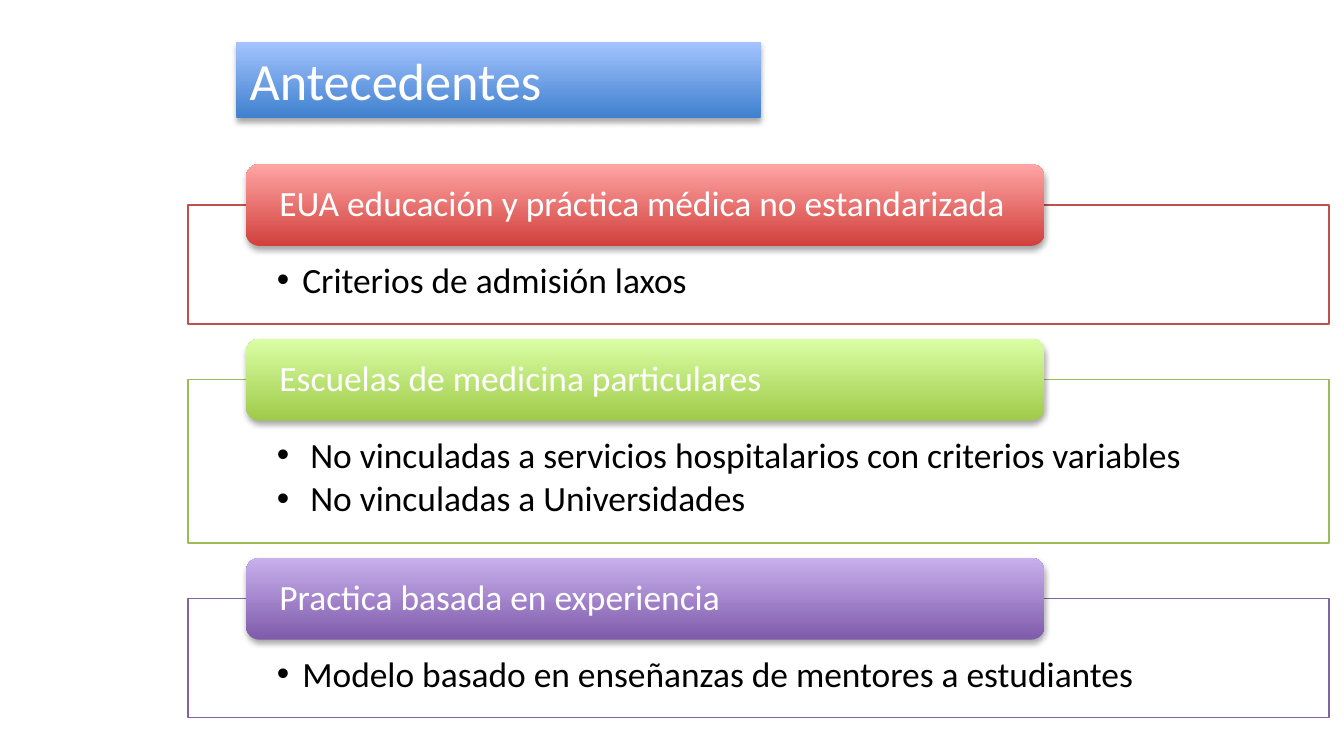
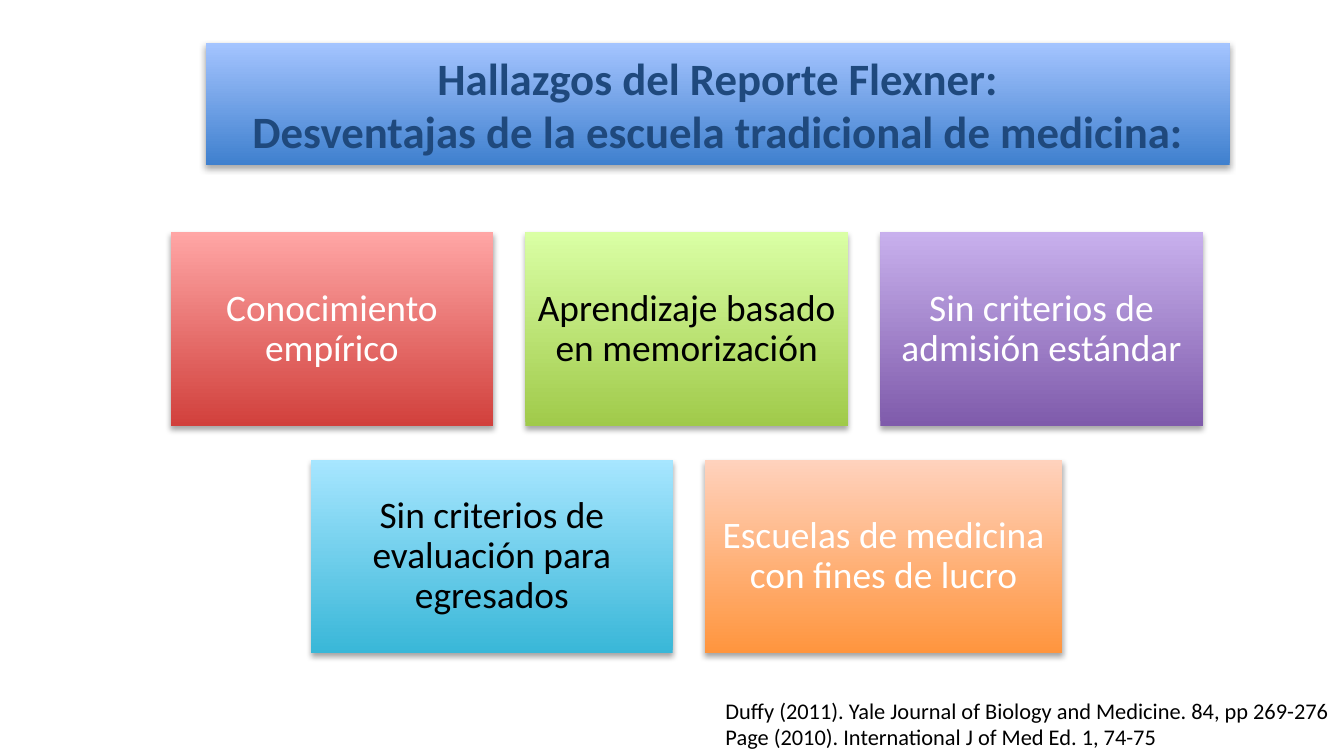
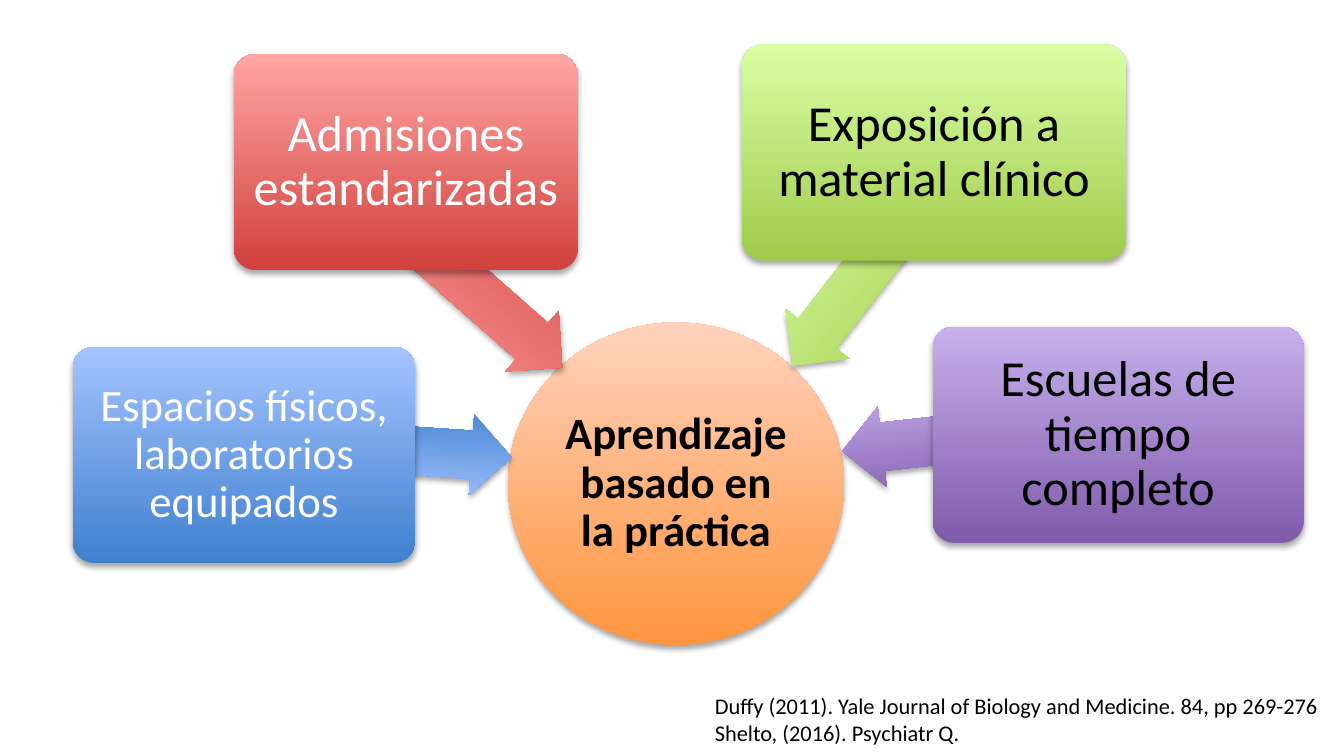
from dataclasses import dataclass
from lxml.etree import SubElement
from pptx import Presentation
from pptx.dml.color import RGBColor
from pptx.enum.shapes import MSO_SHAPE
from pptx.enum.text import MSO_ANCHOR, PP_ALIGN
from pptx.oxml.ns import qn
from pptx.util import Inches, Pt


@dataclass(frozen=True)
class Theme:
    """Colours as (dark, light) pairs, and type sizes in points."""
    font: str = "Calibri"
    blue: tuple = ("3F80CE", "A4C4FF")
    red: tuple = ("D1403C", "FFA6A5")
    green: tuple = ("A0CA4A", "DAFFA5")
    violet: tuple = ("7F5BAB", "C8B0ED")
    aqua: tuple = ("39B7D8", "A7E6FF")
    orange: tuple = ("FF953E", "FFD2BD")
    edges: tuple = ("C0504D", "9BBB59", "8064A2")
    white: str = "FFFFFF"
    black: str = "000000"
    navy: str = "1F497D"
    title: int = 28
    large: int = 27
    head: int = 24
    tile: int = 20
    body: int = 19
    note: int = 12


T = Theme()
DUFFY = "Duffy (2011). Yale Journal of Biology and Medicine. 84, pp 269-276"


def rgb(code):
    """Turn a hex code into a colour."""
    return RGBColor.from_string(code)


def add_form(slide, kind, box):
    """Add a preset shape without shadow or line."""
    form = slide.shapes.add_shape(kind, *map(Inches, box))
    form.shadow.inherit = False
    form.line.fill.background()
    return form


def add_block(slide, kind, box, pair):
    """Add a shape with a vertical gradient and a soft shadow."""
    block = add_form(slide, kind, box)
    block.fill.gradient()
    block.fill.gradient_angle = 90
    for stop, code in zip(block.fill.gradient_stops, pair):
        stop.color.rgb = rgb(code)
    effects = block._element.spPr.find(qn("a:effectLst"))
    shade = SubElement(effects, qn("a:outerShdw"), blurRad="40000",
                       dist="23000", dir="5400000", rotWithShape="0")
    tint = SubElement(shade, qn("a:srgbClr"), val=T.black)
    SubElement(tint, qn("a:alpha"), val="35000")
    return block


def add_bullet(para):
    """Give a paragraph a hanging round bullet."""
    props = para._p.get_or_add_pPr()
    props.set("marL", str(Inches(0.19)))
    props.set("indent", str(-Inches(0.19)))
    SubElement(props, qn("a:buFont"), typeface="Arial")
    SubElement(props, qn("a:buChar"), char="•")


def write(shape, lines, size, color, align=PP_ALIGN.CENTER, bold=False,
          inset=(0.1, 0.05, 0.1, 0.05), anchor=MSO_ANCHOR.MIDDLE,
          pitch=1.0, bullet=False):
    """Write one paragraph per line into a shape."""
    frame = shape.text_frame
    frame.word_wrap = True
    frame.vertical_anchor = anchor
    (frame.margin_left, frame.margin_top,
     frame.margin_right, frame.margin_bottom) = map(Inches, inset)
    for i, line in enumerate(lines):
        para = frame.add_paragraph() if i else frame.paragraphs[0]
        if bullet:
            add_bullet(para)
            para.level = 1
            para.space_after = Pt(3)
        para.alignment = align
        para.line_spacing = pitch
        run = para.add_run()
        run.text = line
        run.font.name = T.font
        run.font.size = Pt(size)
        run.font.bold = bold
        run.font.color.rgb = rgb(color)


def add_title(slide, box, lines, size, color, **style):
    """Add the blue title band."""
    band = add_block(slide, MSO_SHAPE.RECTANGLE, box, T.blue)
    write(band, lines, size, color, **style)


def add_notes(slide, box, lines):
    """Add source lines at the foot."""
    note = slide.shapes.add_textbox(*map(Inches, box))
    write(note, lines, T.note, T.black, PP_ALIGN.LEFT, anchor=MSO_ANCHOR.TOP)


def add_panel(slide, box, head, points, pair, edge):
    """Add an outlined list with a heading pill over its top edge."""
    left, top, width, height = box
    pill = 0.61
    frame = add_form(slide, MSO_SHAPE.RECTANGLE,
                     (left, top + pill / 2, width, height - pill / 2))
    frame.fill.solid()
    frame.fill.fore_color.rgb = rgb(T.white)
    frame.line.color.rgb = rgb(edge)
    frame.line.width = Pt(0.75)
    write(frame, points, T.body, T.black, PP_ALIGN.LEFT, pitch=0.9,
          inset=(0.66, 0.43, 0.66, 0.15), anchor=MSO_ANCHOR.TOP, bullet=True)
    label = add_block(slide, MSO_SHAPE.ROUNDED_RECTANGLE,
                      (left + 0.43, top, width * 0.7, pill), pair)
    write(label, [head], T.body, T.white, PP_ALIGN.LEFT, pitch=0.9,
          inset=(0.22, 0, 0.22, 0))


def add_row(slide, mid, top, tiles):
    """Add a centred row of tiles with equal gaps."""
    gap = 0.24
    left = mid - (sum(tile[0] for tile in tiles) + gap * (len(tiles) - 1)) / 2
    for width, text, pair, color in tiles:
        tile = add_block(slide, MSO_SHAPE.RECTANGLE,
                         (left, top, width, 1.44), pair)
        write(tile, [text], T.tile, color, inset=(0.08,) * 4, pitch=0.9)
        left += width + gap


def add_node(slide, box, text, size, color, pair, arrow, turn):
    """Add a rounded node over the arrow that leaves it."""
    shaft = add_block(slide, MSO_SHAPE.LEFT_ARROW, (*arrow, 0.6), pair)
    shaft.adjustments[0] = 0.6
    shaft.adjustments[1] = 0.5
    shaft.rotation = turn
    node = add_block(slide, MSO_SHAPE.ROUNDED_RECTANGLE, (*box, 1.61), pair)
    node.adjustments[0] = 0.1
    write(node, [text], size, color, inset=(0.06,) * 4, pitch=0.9)


def draw_past(slide):
    """Build the background slide."""
    add_title(slide, (1.76, 0.31, 3.9, 0.57), ["Antecedentes"],
              T.title, T.white, align=PP_ALIGN.LEFT)
    panels = [
        ("EUA educación y práctica médica no estandarizada",
         ["Criterios de admisión laxos"], T.red),
        ("Escuelas de medicina particulares",
         [" No vinculadas a servicios hospitalarios con criterios variables",
          " No vinculadas a Universidades"], T.green),
        ("Practica basada en experiencia",
         ["Modelo basado en enseñanzas de mentores a estudiantes"], T.violet),
    ]
    top = 1.22
    for (head, points, pair), edge in zip(panels, T.edges):
        height = 0.86 + 0.33 * len(points)
        add_panel(slide, (1.4, top, 8.49, height), head, points, pair, edge)
        top += height + 0.11


def draw_flaws(slide):
    """Build the report findings slide."""
    add_title(slide, (1.53, 0.32, 7.62, 0.91),
              ["Hallazgos del Reporte Flexner:",
               "Desventajas de la escuela tradicional de medicina:"],
              T.head, T.navy, bold=True)
    add_row(slide, 5.11, 1.73, [
        (2.4, "Conocimiento empírico", T.red, T.white),
        (2.4, "Aprendizaje basado en memorización", T.green, T.black),
        (2.4, "Sin criterios de admisión estándar", T.violet, T.white)])
    add_row(slide, 5.11, 3.42, [
        (2.69, "Sin criterios de evaluación para egresados", T.aqua, T.black),
        (2.66, "Escuelas de medicina con fines de lucro", T.orange, T.white)])
    pages = [DUFFY, "Page (2010). International J of Med Ed. 1, 74-75"]
    for i, line in enumerate(pages):
        add_notes(slide, (5.3, 5.14 + 0.19 * i, 4.84, 0.3), [line])


def draw_hub(slide):
    """Build the practice hub slide."""
    hub = add_block(slide, MSO_SHAPE.OVAL, (3.78, 2.4, 2.5, 2.4), T.orange)
    write(hub, ["Aprendizaje basado en la práctica"], T.head, T.black,
          bold=True, inset=(0.02,) * 4, pitch=0.9)
    nodes = [
        ((0.54, 2.58, 2.55), "Espacios físicos, laboratorios equipados",
         T.head, T.white, T.blue, (1.9, 3.04, 1.91), 183.8),
        ((1.74, 0.4, 2.56), "Admisiones estandarizadas",
         T.large, T.white, T.red, (2.18, 1.68, 2.29), 221.4),
        ((5.52, 0.33, 2.86), "Exposición a material clínico",
         T.large, T.black, T.green, (5.55, 1.71, 1.8), 307.8),
        ((6.94, 2.43, 2.76), "Escuelas de tiempo completo",
         T.large, T.black, T.violet, (6.26, 2.95, 1.94), 353.6),
    ]
    for node in nodes:
        add_node(slide, *node)
    add_notes(slide, (5.22, 5.1, 4.78, 0.5),
              [DUFFY, "Shelto, (2016). Psychiatr Q."])


def main():
    """Build and save the deck."""
    deck = Presentation()
    deck.slide_width = Inches(10)
    deck.slide_height = deck.slide_width * 9 // 16
    for draw in (draw_past, draw_flaws, draw_hub):
        draw(deck.slides.add_slide(deck.slide_layouts[6]))
    deck.save("out.pptx")


if __name__ == "__main__":
    main()
